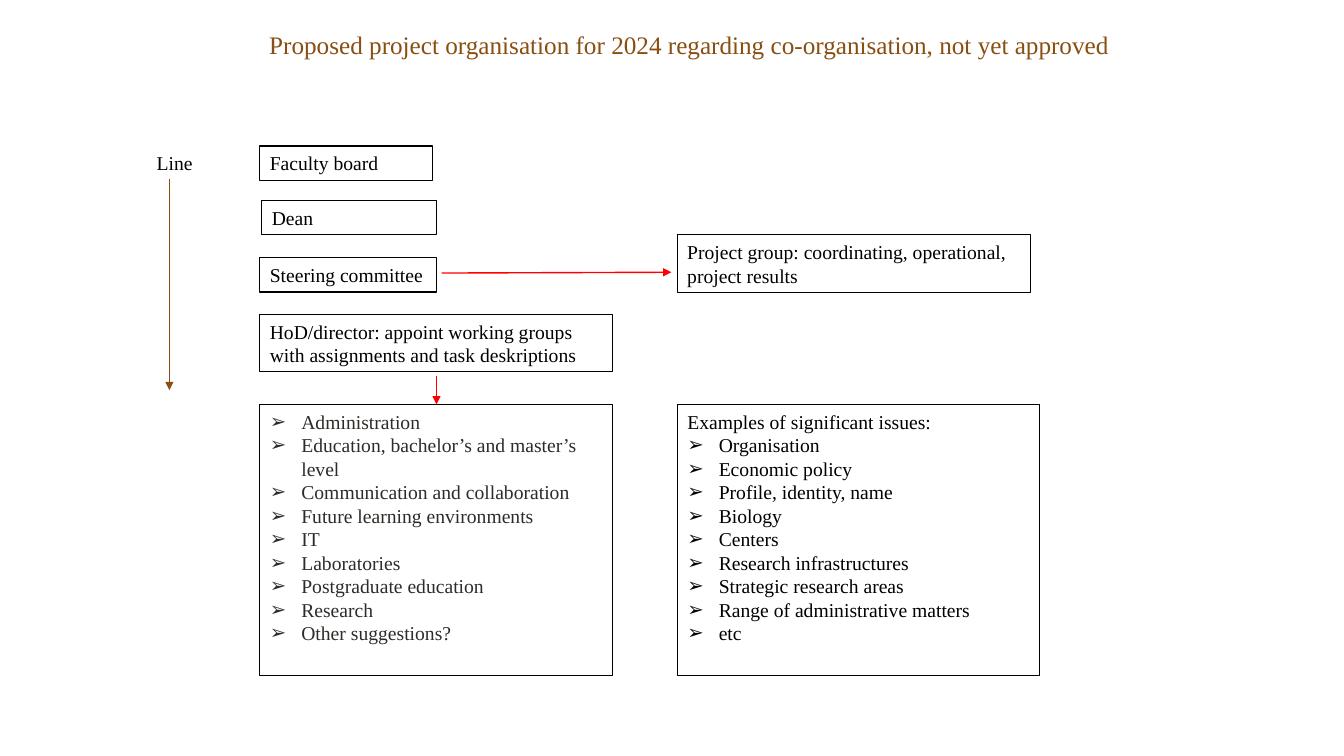
from dataclasses import dataclass

from lxml import etree
from pptx import Presentation
from pptx.dml.color import RGBColor
from pptx.enum.shapes import MSO_CONNECTOR, MSO_SHAPE
from pptx.enum.text import MSO_ANCHOR, MSO_AUTO_SIZE, PP_ALIGN
from pptx.oxml.ns import qn
from pptx.util import Cm, Pt

STRAIGHT = MSO_CONNECTOR.STRAIGHT
RECTANGLE = MSO_SHAPE.RECTANGLE
TOP, MIDDLE = MSO_ANCHOR.TOP, MSO_ANCHOR.MIDDLE
NO_AUTO_SIZE = MSO_AUTO_SIZE.NONE
LEFT, CENTER = PP_ALIGN.LEFT, PP_ALIGN.CENTER
TWO_CONTENT_LAYOUT = 3


@dataclass(frozen=True)
class Theme:
    font: str = "Times New Roman"
    title_size: float = 18
    body_size: float = 14
    accent: RGBColor = RGBColor(0x89, 0x4E, 0x11)
    text: RGBColor = RGBColor(0, 0, 0)
    soft_text: RGBColor = RGBColor(0x2F, 0x2B, 0x28)
    flow: RGBColor = RGBColor(0xFF, 0, 0)
    background: RGBColor = RGBColor(0xFF, 0xFF, 0xFF)
    bullet: str = "➢"
    bullet_indent: float = 0.79


THEME = Theme()


@dataclass(frozen=True)
class Area:
    left: float
    top: float
    width: float
    height: float


@dataclass(frozen=True)
class Box:
    text: str
    area: Area


@dataclass(frozen=True)
class ListPanel:
    area: Area
    items: list[str]
    color: RGBColor
    line_width: float
    heading: str = ""
    filled: bool = False


@dataclass(frozen=True)
class Arrow:
    start: tuple[float, float]
    end: tuple[float, float]
    color: RGBColor
    width: float


COLUMN_LEFT, COLUMN_RIGHT = 6.55, 17.07
BOX_WIDTH, ONE_LINE, TWO_LINES = 8.89, 0.86, 1.45
LIST_TOP, LIST_HEIGHT = 10.19, 6.83

TITLE = Box(
    "Proposed project organisation for 2024 regarding co-organisation, not yet approved",
    Area(6.53, 0.61, 21.9, 1.02),
)
LINE_LABEL = Box("Line", Area(3.02, 3.66, 2.77, ONE_LINE))
BOXES = [
    Box("Faculty board", Area(COLUMN_LEFT, 3.68, 4.34, ONE_LINE)),
    Box("Dean", Area(6.6, 5.05, 4.39, ONE_LINE)),
    Box("Steering committee", Area(COLUMN_LEFT, 6.5, 4.45, ONE_LINE)),
    Box("HoD/director: appoint working groups with assignments and task deskriptions",
        Area(COLUMN_LEFT, 7.92, BOX_WIDTH, TWO_LINES)),
    Box("Project group: coordinating, operational, project results",
        Area(COLUMN_RIGHT, 5.92, BOX_WIDTH, TWO_LINES)),
]
PANELS = [
    ListPanel(
        Area(COLUMN_LEFT, LIST_TOP, BOX_WIDTH, LIST_HEIGHT),
        ["Administration", "Education, bachelor’s and master’s level",
         "Communication and collaboration", "Future learning environments", "IT",
         "Laboratories", "Postgraduate education", "Research", "Other suggestions?"],
        THEME.soft_text, 0.75,
    ),
    ListPanel(
        Area(COLUMN_RIGHT, LIST_TOP, 9.12, LIST_HEIGHT),
        ["Organisation", "Economic policy", "Profile, identity, name", "Biology",
         "Centers", "Research infrastructures", "Strategic research areas",
         "Range of administrative matters", "etc"],
        THEME.text, 1, "Examples of significant issues:", True,
    ),
]
ARROWS = [
    Arrow((11, 9.47), (11, LIST_TOP), THEME.flow, 1),
    Arrow((11.13, 6.88), (16.92, 6.86), THEME.flow, 1),
    Arrow((4.27, 4.52), (4.27, 9.83), THEME.accent, 0.5),
]


def place(shape, area: Area) -> None:
    shape.left, shape.top = Cm(area.left), Cm(area.top)
    shape.width, shape.height = Cm(area.width), Cm(area.height)


def prepare_frame(shape, anchor):
    frame = shape.text_frame
    frame.word_wrap = True
    frame.auto_size = NO_AUTO_SIZE
    frame.vertical_anchor = anchor
    return frame


def format_paragraph(paragraph, color: RGBColor, size: float = THEME.body_size,
                     alignment=LEFT, bulleted: bool = False) -> None:
    paragraph.alignment = alignment
    paragraph.space_before = Pt(0)
    properties = paragraph._p.get_or_add_pPr()
    indent = Cm(THEME.bullet_indent) if bulleted else 0
    properties.set("marL", str(indent))
    properties.set("indent", str(-indent))
    if bulleted:
        etree.SubElement(properties, qn("a:buChar")).set("char", THEME.bullet)
    else:
        etree.SubElement(properties, qn("a:buNone"))
    font = paragraph.font
    font.name, font.size, font.bold = THEME.font, Pt(size), False
    font.color.rgb = color


def outline(shape, width: float) -> None:
    shape.line.color.rgb = THEME.text
    shape.line.width = Pt(width)


def write_box(shape, box: Box, color: RGBColor = THEME.text,
              size: float = THEME.body_size, alignment=LEFT) -> None:
    place(shape, box.area)
    frame = prepare_frame(shape, MIDDLE)
    frame.text = box.text
    format_paragraph(frame.paragraphs[0], color, size, alignment)


def draw_box(slide, box: Box) -> None:
    shape = slide.shapes.add_shape(RECTANGLE, 0, 0, 0, 0)
    shape.shadow.inherit = False
    shape.fill.background()
    outline(shape, 0.75)
    write_box(shape, box)


def fill_panel(shape, panel: ListPanel) -> None:
    place(shape, panel.area)
    outline(shape, panel.line_width)
    if panel.filled:
        shape.fill.solid()
        shape.fill.fore_color.rgb = THEME.background
    frame = prepare_frame(shape, TOP)
    heading = [panel.heading] if panel.heading else []
    frame.text = "\n".join(heading + panel.items)
    for index, paragraph in enumerate(frame.paragraphs):
        format_paragraph(paragraph, panel.color, bulleted=index >= len(heading))


def draw_arrow(slide, arrow: Arrow) -> None:
    points = [Cm(value) for value in arrow.start + arrow.end]
    connector = slide.shapes.add_connector(STRAIGHT, *points)
    connector.line.color.rgb = arrow.color
    connector.line.width = Pt(arrow.width)
    line = connector.line._get_or_add_ln()
    etree.SubElement(line, qn("a:tailEnd")).set("type", "triangle")
    etree.SubElement(connector._element.spPr, qn("a:effectLst"))


def main() -> None:
    presentation = Presentation()
    presentation.slide_width, presentation.slide_height = Cm(33.87), Cm(19.05)
    slide = presentation.slides.add_slide(presentation.slide_layouts[TWO_CONTENT_LAYOUT])
    title, *bodies = slide.placeholders
    write_box(title, TITLE, THEME.accent, THEME.title_size)
    for body, panel in zip(bodies, PANELS):
        fill_panel(body, panel)
    for box in BOXES:
        draw_box(slide, box)
    write_box(slide.shapes.add_textbox(0, 0, 0, 0), LINE_LABEL, alignment=CENTER)
    for arrow in ARROWS:
        draw_arrow(slide, arrow)
    presentation.save("out.pptx")


if __name__ == "__main__":
    main()
